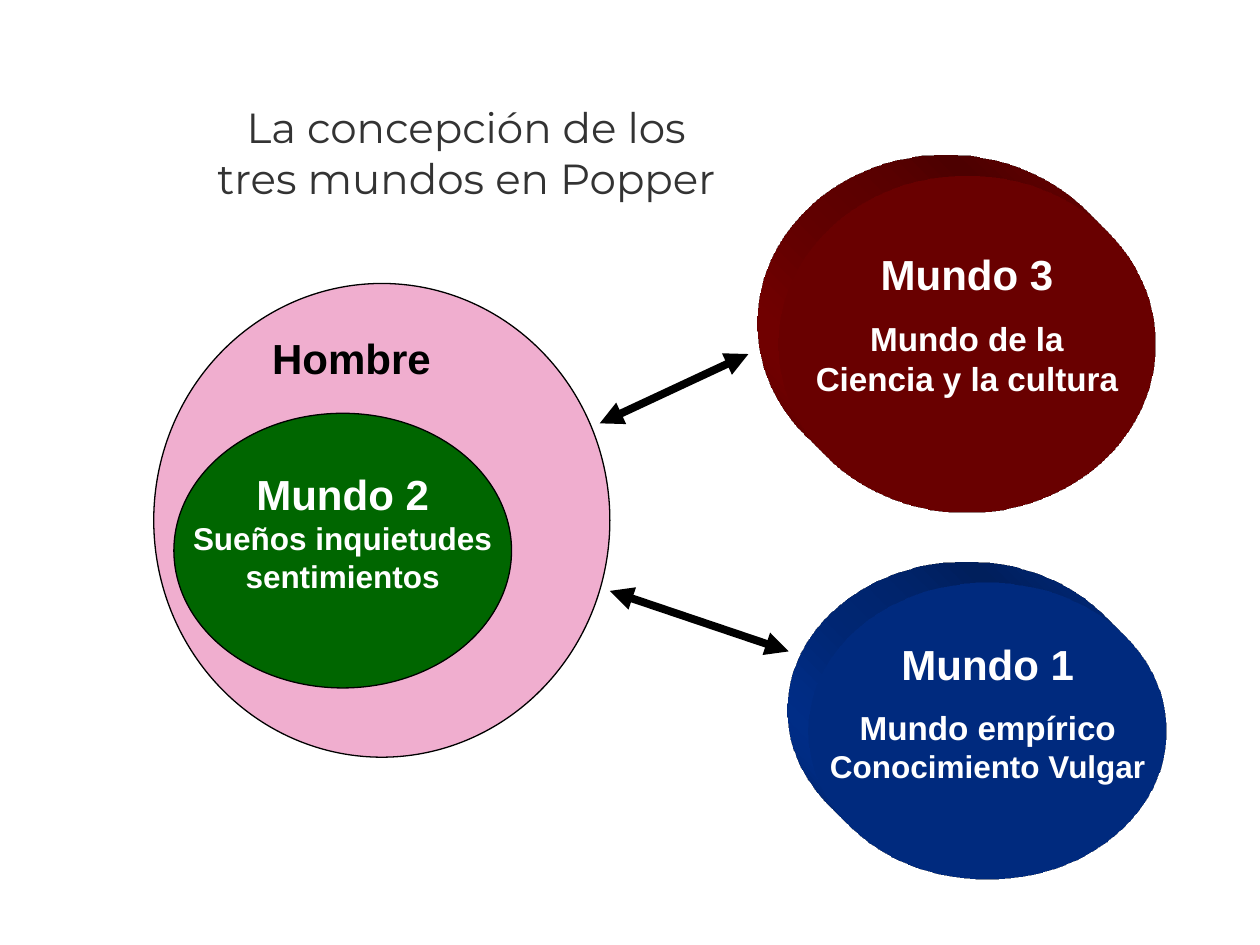
import lxml.etree
import pptx
import pptx.dml.color
import pptx.enum.shapes
import pptx.enum.text
import pptx.oxml
import pptx.oxml.ns
import pptx.util

THEME = {
    "title_font": "Montserrat", "body_font": "Arial",
    "heading": 24, "large": 19, "small": 18, "gap": 10, "wide_gap": 11,
    "outline": 0.75, "arrow": 4.5,
    "black": "000000", "white": "FFFFFF", "title": "333333",
    "man": "F0AECF", "world1": "003399", "world2": "006600", "world3": "800000",
}
WIDTH, HEIGHT = 10, 7.5
COLUMNS, ROWS = 100, 75

ELLIPSES = [
    {"box": (12.2, 22.5, 36.2, 37.6), "fill": "man", "solid": False, "lines": []},
    {"box": (61.8, 13.9, 29.9, 26.8), "fill": "world3", "solid": True, "bottom": 0.38,
     "lines": [("Mundo 3", "heading", 0), ("Mundo de la", "large", "wide_gap"),
               ("Ciencia y la cultura", "large", 0)]},
    {"box": (64.2, 46.2, 28.4, 23.6), "fill": "world1", "solid": True, "bottom": 0.35,
     "lines": [("Mundo 1", "heading", 0), ("Mundo empírico", "large", "gap"),
               ("Conocimiento Vulgar", "small", 0)]},
    {"box": (13.8, 32.8, 26.8, 21.8), "fill": "world2", "solid": False, "bottom": 0.35,
     "lines": [("Mundo 2", "heading", 0), ("Sueños inquietudes", "small", 0),
               ("sentimientos", "small", 0)]},
]
LABELS = [
    {"box": (16.1, 7.6, 41.8, 14.1), "font": "title_font", "color": "title", "bold": False,
     "lines": [("La concepción de los", "heading", 0), ("tres mundos en Popper", "heading", 0)]},
    {"box": (20.6, 25.9, 14.6, 5), "font": "body_font", "color": "black", "bold": True,
     "lines": [("Hombre", "heading", 0)]},
]
ARROWS = [(47.6, 33.6, 59.4, 28.1), (48.4, 46.9, 62.6, 51.7)]


def place(values):
    units = (WIDTH / COLUMNS, HEIGHT / ROWS) * 2
    return [pptx.util.Inches(value * unit) for value, unit in zip(values, units)]


def color(name):
    return pptx.dml.color.RGBColor.from_string(THEME[name])


def assign(target, values):
    for name, value in values.items():
        setattr(target, name, value)


def add_element(parent, tag, **attributes):
    return lxml.etree.SubElement(parent, pptx.oxml.ns.qn(tag), attributes)


def write(frame, lines, font, color_name, bold, frame_format):
    assign(frame, {"word_wrap": False, **frame_format})
    for index, (text, size, space) in enumerate(lines):
        paragraph = frame.paragraphs[0] if index == 0 else frame.add_paragraph()
        assign(paragraph, {"alignment": pptx.enum.text.PP_ALIGN.CENTER,
                           "space_before": pptx.util.Pt(THEME.get(space, 0))})
        run = paragraph.add_run()
        run.text = text
        assign(run.font, {"name": THEME[font], "size": pptx.util.Pt(THEME[size]), "bold": bold})
        run.font.color.rgb = color(color_name)


def extrude(shape, color_name):
    properties = shape._element.spPr
    scene = add_element(properties, "a:scene3d")
    add_element(scene, "a:camera", prst="legacyObliqueTopLeft")
    add_element(scene, "a:lightRig", rig="legacyFlat3", dir="b")
    body = add_element(properties, "a:sp3d", extrusionH="430200", prstMaterial="legacyMatte")
    for bevel in ("a:bevelT", "a:bevelB"):
        add_element(body, bevel, w="13500", h="13500", prst="angle")
    add_element(add_element(body, "a:extrusionClr"), "a:srgbClr", val=THEME[color_name])


def add_ellipse(slide, item):
    shape = slide.shapes.add_shape(pptx.enum.shapes.MSO_SHAPE.OVAL, *place(item["box"]))
    shape.shadow.inherit = False
    shape.fill.solid()
    shape.fill.fore_color.rgb = color(item["fill"])
    if item["solid"]:
        shape.line.fill.background()
        extrude(shape, item["fill"])
    else:
        shape.line.color.rgb = color("black")
        shape.line.width = pptx.util.Pt(THEME["outline"])
    if item["lines"]:
        write(shape.text_frame, item["lines"], "body_font", "white", True,
              {"vertical_anchor": pptx.enum.text.MSO_ANCHOR.MIDDLE,
               "margin_bottom": pptx.util.Inches(item["bottom"])})


def add_label(slide, item):
    box = slide.shapes.add_textbox(*place(item["box"]))
    write(box.text_frame, item["lines"], item["font"], item["color"], item["bold"],
          {"vertical_anchor": pptx.enum.text.MSO_ANCHOR.TOP})


def add_arrow(slide, ends):
    arrow = slide.shapes.add_connector(pptx.enum.shapes.MSO_CONNECTOR.STRAIGHT, *place(ends))
    arrow.line.color.rgb = color("black")
    arrow.line.width = pptx.util.Pt(THEME["arrow"])
    properties = arrow._element.spPr
    line = properties.find(pptx.oxml.ns.qn("a:ln"))
    for tag in ("a:headEnd", "a:tailEnd"):
        add_element(line, tag, type="triangle")
    add_element(properties, "a:effectLst")


def main():
    presentation = pptx.Presentation()
    assign(presentation, {"slide_width": pptx.util.Inches(WIDTH),
                          "slide_height": pptx.util.Inches(HEIGHT)})
    slide = presentation.slides.add_slide(presentation.slide_layouts[6])
    for add, items in ((add_ellipse, ELLIPSES), (add_label, LABELS), (add_arrow, ARROWS)):
        for item in items:
            add(slide, item)
    presentation.save("out.pptx")


if __name__ == "__main__":
    main()
